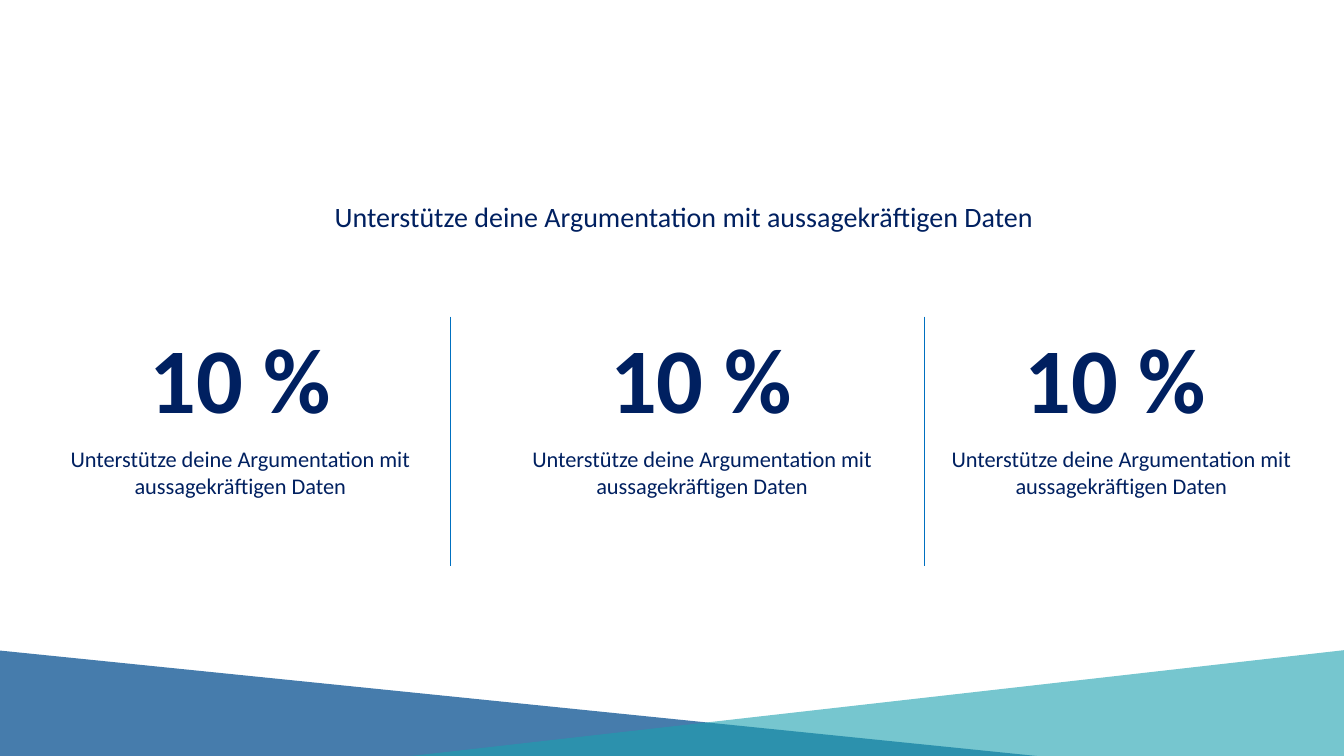
from dataclasses import dataclass

from lxml import etree
from pptx import Presentation
from pptx.dml.color import RGBColor
from pptx.enum.shapes import MSO_CONNECTOR, MSO_SHAPE
from pptx.enum.text import MSO_ANCHOR, MSO_AUTO_SIZE, PP_ALIGN
from pptx.oxml.ns import qn
from pptx.util import Pt

TRIANGLE = MSO_SHAPE.ISOSCELES_TRIANGLE
STRAIGHT = MSO_CONNECTOR.STRAIGHT
TOP = MSO_ANCHOR.TOP
NO_FIT = MSO_AUTO_SIZE.NONE
CENTER = PP_ALIGN.CENTER

FONT = "Calibri"
NAVY = "002060"
BLUE = "0070C0"
MESSAGE = "Unterstütze deine Argumentation mit aussagekräftigen Daten"

WIDE = 715
VALUE_TOP = 226.1
CAPTION_TOP = 314.6
CAPTION_WIDTH = 336.2
DIVIDER_BOTTOM = 404.6


@dataclass
class Wedge:
    left: float
    width: float
    height: float
    apex: float
    color: str
    opacity: int


@dataclass
class Figure:
    value: str
    value_left: float
    caption_left: float


WEDGES = [
    Wedge(-553, 1421.3, 88.6, 0.387, "095191", 75),
    Wedge(141.1, 1638, 92.9, 0.5, "1BA0AF", 60),
]
FIGURES = [
    Figure("10 %", -185.8, 3.6),
    Figure("10 %", 143.3, 333.4),
    Figure("10 %", 439.2, 632.9),
]
DIVIDERS = [321.8, 660.2]


def rgb(color: str) -> RGBColor:
    return RGBColor.from_string(color)


def place(sp, left: float, top: float, width: float, height: float) -> None:
    sp.left, sp.top, sp.width, sp.height = Pt(left), Pt(top), Pt(width), Pt(height)


def write(sp, text: str, size: float, bold: bool = False) -> None:
    """Fill a text shape with one centred, wrapping paragraph."""
    tf = sp.text_frame
    tf.word_wrap = True
    tf.auto_size = NO_FIT
    tf.vertical_anchor = TOP
    p = tf.paragraphs[0]
    p.alignment = CENTER
    r = p.add_run()
    r.text = text
    r.font.name = FONT
    r.font.size = Pt(size)
    r.font.bold = bold
    r.font.color.rgb = rgb(NAVY)


def add_wedge(s, wedge: Wedge) -> None:
    sp = s.shapes.add_shape(TRIANGLE, 0, 0, 0, 0)
    place(sp, wedge.left, 464.4, wedge.width, wedge.height)
    sp.adjustments[0] = wedge.apex
    sp.shadow.inherit = False
    sp.line.fill.background()
    sp.fill.solid()
    sp.fill.fore_color.rgb = rgb(wedge.color)
    color = sp.fill._xPr.find(".//" + qn("a:srgbClr"))
    etree.SubElement(color, qn("a:alpha")).set("val", str(wedge.opacity * 1000))


def add_text(s, left: float, top: float, width: float, height: float,
             text: str, size: float, bold: bool = False) -> None:
    sp = s.shapes.add_textbox(Pt(left), Pt(top), Pt(width), Pt(height))
    write(sp, text, size, bold)


def add_divider(s, x: float) -> None:
    line = s.shapes.add_connector(STRAIGHT, Pt(x), Pt(VALUE_TOP), Pt(x), Pt(DIVIDER_BOTTOM))
    line.line.color.rgb = rgb(BLUE)
    line.line.width = Pt(1)
    etree.SubElement(line._element.spPr, qn("a:effectLst"))


def main() -> None:
    prs = Presentation()
    prs.slide_width, prs.slide_height = Pt(960), Pt(540)
    s = prs.slides.add_slide(prs.slide_layouts[5])

    for wedge in WEDGES:
        add_wedge(s, wedge)

    title = s.shapes.title
    place(title, 131, 139, WIDE, 31.7)
    write(title, MESSAGE, 20)

    for figure in FIGURES:
        add_text(s, figure.value_left, VALUE_TOP, WIDE, 87.1, figure.value, 66, True)
        add_text(s, figure.caption_left, CAPTION_TOP, CAPTION_WIDTH, 46.1, MESSAGE, 16)
    for x in DIVIDERS:
        add_divider(s, x)

    prs.save("out.pptx")


if __name__ == "__main__":
    main()
